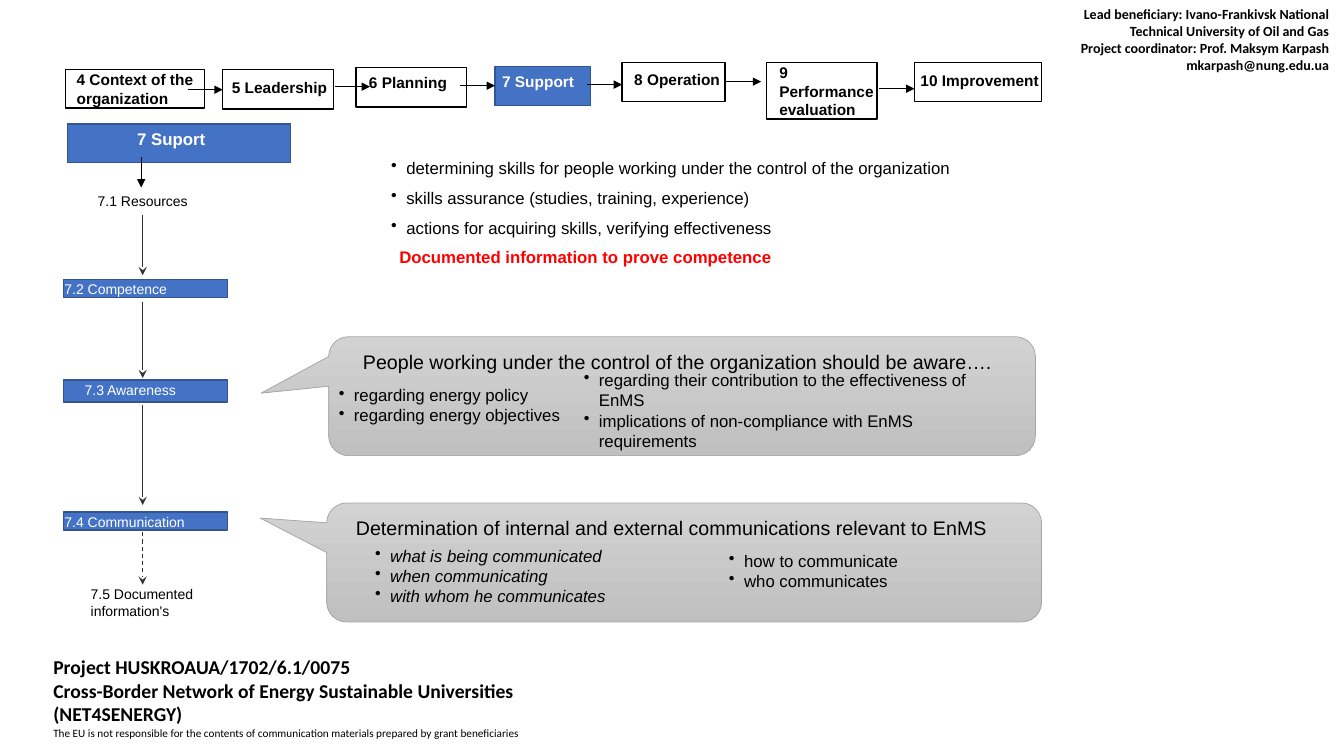
from collections import namedtuple
from lxml.etree import SubElement
from pptx import Presentation
from pptx.dml.color import RGBColor
from pptx.enum.dml import MSO_LINE
from pptx.enum.shapes import MSO_CONNECTOR as Connector, MSO_SHAPE as Shape
from pptx.enum.text import MSO_ANCHOR as Anchor, PP_ALIGN as Align
from pptx.oxml.ns import qn
from pptx.util import Inches, Pt

SLIDE_W, SLIDE_H = Inches(13.33), Inches(7.5)
COLUMN, ROW = SLIDE_W / 133.3, SLIDE_H / 75


class Theme:
    black, white, red = "000000", "FFFFFF", "FF0000"
    blue, navy, ink, grey = "4472C4", "325491", "333333", "A5A5A5"
    callout_top, callout_bottom = "D2D2D2", "C0C0C0"
    title, body, step, clause, contact, note = 14, 12, 11, 10, 10, 8
    font, project_font = "Arial", "Calibri"


class Box(namedtuple("Box", "x y w h")):
    """Area measured in grid columns and rows."""

    def inner(self, x, y, w, h):
        return Box(self.x + x, self.y + y, w, h)

    def emu(self):
        return [round(n * u) for n, u in zip(self, (COLUMN, ROW, COLUMN, ROW))]


def rgb(value):
    return RGBColor.from_string(value)


def set_attributes(target, values):
    for name, value in values.items():
        setattr(target, name, value)


def write(shape, lines, size, color=Theme.black, bold=False, italic=False,
          font=Theme.font, inset=(0, 0.1), gap=0, bullet=False, align=Align.LEFT):
    """Fill a shape with one paragraph per line; inset is columns, rows."""
    frame = shape.text_frame
    set_attributes(frame, {
        "word_wrap": True, "vertical_anchor": Anchor.TOP,
        "margin_left": round(inset[0] * COLUMN), "margin_right": 0,
        "margin_top": round(inset[1] * ROW), "margin_bottom": 0})
    for index, line in enumerate(lines):
        paragraph = frame.paragraphs[0] if index == 0 else frame.add_paragraph()
        if bullet:
            properties = paragraph._p.get_or_add_pPr()
            properties.set("marL", str(Inches(0.16)))
            properties.set("indent", str(-Inches(0.15)))
            SubElement(properties, qn("a:buChar")).set("char", "•")
        paragraph.alignment = align
        if index and gap:
            paragraph.space_before = Pt(gap)
        run = paragraph.add_run()
        run.text = line
        set_attributes(run.font, {"name": font, "size": Pt(size),
                                  "bold": bold, "italic": italic})
        run.font.color.rgb = rgb(color)


def add_text(slide, box, lines, size, **style):
    write(slide.shapes.add_textbox(*box.emu()), lines, size, **style)


def add_panel(slide, box, fill, line, width=1, preset=Shape.RECTANGLE):
    panel = slide.shapes.add_shape(preset, *box.emu())
    panel.shadow.inherit = False
    panel.fill.solid()
    panel.fill.fore_color.rgb = rgb(fill)
    panel.line.color.rgb = rgb(line)
    panel.line.width = Pt(width)
    return panel


def add_arrow(slide, start, end, width=1.0, color=Theme.black,
              head="triangle", dashed=False):
    ends = Box(*start, *end).emu()
    arrow = slide.shapes.add_connector(Connector.STRAIGHT, *ends)
    arrow.line.color.rgb = rgb(color)
    arrow.line.width = Pt(width)
    if dashed:
        arrow.line.dash_style = MSO_LINE.DASH
    SubElement(arrow.line._get_or_add_ln(), qn("a:tailEnd")).set("type", head)
    SubElement(arrow._element.spPr, qn("a:effectLst"))


def add_project_details(slide, box):
    heading = ["Project HUSKROAUA/1702/6.1/0075",
               "Cross-Border Network of Energy Sustainable Universities",
               "(NET4SENERGY)"]
    disclaimer = ["The EU is not responsible for the contents of communication "
                  "materials prepared by grant beneficiaries"]
    add_text(slide, box.inner(0, 0, box.w, 7.2), heading, Theme.title, bold=True,
             font=Theme.project_font, inset=(1, 0.5))
    add_text(slide, box.inner(0, 7.6, box.w, 1.5), disclaimer, Theme.note,
             font=Theme.project_font, inset=(1, 0))


def add_contacts(slide, box):
    contacts = ["Lead beneficiary: Ivano-Frankivsk National",
                "Technical University of Oil and Gas",
                "Project coordinator: Prof. Maksym Karpash",
                "mkarpash@nung.edu.ua"]
    add_text(slide, box, contacts, Theme.contact, bold=True, align=Align.RIGHT,
             font=Theme.project_font, inset=(0, 0.5))


def add_standard_chain(slide, box):
    """Row of standard chapters with the current one highlighted."""
    chapters = [
        ("4 Context of the organization", (0, 0.7, 13.8, 3.8), (1.1, 0.1)),
        ("5 Leadership", (15.6, 0.7, 11, 3.9), (0.9, 0.8)),
        ("6 Planning", (28.8, 0.5, 11, 3.9), (1.3, 0.6)),
        ("7 Support", (42.6, 0.4, 9.5, 3.9), (0.7, 0.6)),
        ("8 Operation", (55.2, 0, 10.2, 3.9), (1.2, 0.8)),
        ("9 Performance evaluation", (69.5, 0, 11, 5.6), (1.3, 0.1)),
        ("10 Improvement", (84.2, 0, 12.6, 3.9), (0.6, 0.9))]
    for label, place, inset in chapters:
        current = label == "7 Support"
        panel = add_panel(slide, box.inner(*place),
                          Theme.blue if current else Theme.white,
                          Theme.navy if current else Theme.black)
        write(panel, [label], Theme.step, bold=True, inset=inset,
              color=Theme.white if current else Theme.black)
    for x, y in [(12.1, 2.7), (26.7, 2.4), (39.1, 2.3), (51.7, 2.2),
                 (65.5, 1.9), (80.7, 2.6)]:
        start = box.inner(x, y, 0, 0)
        add_arrow(slide, start[:2], (start.x + 3.5, start.y))


def add_clause_column(slide, box):
    """Clauses of the current chapter, linked from top to bottom."""
    heading = add_panel(slide, box.inner(0.4, 0, 22.1, 3.8), Theme.blue, Theme.navy)
    write(heading, ["7 Suport"], Theme.body, color=Theme.white, bold=True,
          inset=(6.9, 0.5))
    for label, y, height, inset in [("7.2 Competence", 15.4, 1.8, 0.1),
                                    ("7.3 Awareness", 25.4, 2.2, 2.1),
                                    ("7.4 Communication", 38.5, 1.8, 0.1)]:
        panel = add_panel(slide, box.inner(0, y, 16.3, height), Theme.blue, Theme.navy)
        write(panel, [label], Theme.clause, color=Theme.white, inset=(inset, 0.15))
    for label, x, y, height in [("7.1 Resources", 3.3, 6.7, 1.8),
                                ("7.5 Documented information's", 2.6, 45.7, 3.5)]:
        add_text(slide, box.inner(x, y, 11.6, height), [label], Theme.clause,
                 inset=(0.1, 0.1))
    add_arrow(slide, box.inner(7.7, 3.3, 0, 0)[:2],
              box.inner(7.7, 6.3, 0, 0)[:2], 0.5)
    for top, bottom, dashed in [(9, 15, False), (17.7, 25.2, False),
                                (27.9, 37.8, False), (40.5, 45.7, True)]:
        add_arrow(slide, box.inner(7.85, top, 0, 0)[:2],
                  box.inner(7.85, bottom, 0, 0)[:2],
                  0.75, Theme.ink, "stealth", dashed)


def add_competence_notes(slide, box):
    skills = [
        "determining skills for people working under the control of the organization",
        "skills assurance (studies, training, experience)",
        "actions for acquiring skills, verifying effectiveness"]
    add_text(slide, box.inner(0, 0, box.w, 8.2), skills, Theme.body,
             bullet=True, gap=7.2, inset=(0, 1.1))
    add_text(slide, box.inner(0.9, 9.9, box.w - 0.9, 2),
             ["Documented information to prove competence"], Theme.body,
             color=Theme.red, bold=True)


def add_callout(slide, box, tip, title, title_at, columns):
    """Grey speech box; tip and texts are offsets from its corner."""
    callout = add_panel(slide, box, Theme.callout_top, Theme.grey, 0.5,
                        Shape.ROUNDED_RECTANGULAR_CALLOUT)
    callout.adjustments[0] = tip[0] / box.w - 0.5
    callout.adjustments[1] = tip[1] / box.h - 0.5
    callout.fill.gradient()
    callout.fill.gradient_angle = 270
    for stop, color in zip(callout.fill.gradient_stops,
                           (Theme.callout_top, Theme.callout_bottom)):
        stop.color.rgb = rgb(color)
    add_text(slide, box.inner(*title_at, 64.7, 2.5), [title], Theme.title,
             inset=(0.1, 0.1))
    for place, lines, italic in columns:
        add_text(slide, box.inner(*place), lines, Theme.body, bullet=True,
                 italic=italic)


def main():
    deck = Presentation()
    deck.slide_width, deck.slide_height = SLIDE_W, SLIDE_H
    slide = deck.slides.add_slide(deck.slide_layouts[6])
    add_project_details(slide, Box(4.3, 64.5, 73.8, 9.4))
    add_contacts(slide, Box(92.5, 0.1, 39.3, 7.7))
    add_standard_chain(slide, Box(6.5, 6.2, 96.8, 5.6))
    add_clause_column(slide, Box(6.3, 12.3, 22.5, 49.2))
    add_competence_notes(slide, Box(38.7, 14.5, 62.1, 12))
    add_callout(
        slide, Box(32.6, 33.4, 70.1, 11.8), (-6.7, 5.6),
        "People working under the control of the organization should be aware….",
        (3.3, 1.2),
        [((0.9, 4.7, 26.1, 6.2),
          ["regarding energy policy", "regarding energy objectives"], False),
         ((25.2, 3.2, 41.8, 8.2),
          ["regarding their contribution to the effectiveness of EnMS",
           "implications of non-compliance with EnMS requirements"], False)])
    add_callout(
        slide, Box(32.4, 49.9, 70.9, 11.8), (-6.6, 1.5),
        "Determination of internal and external communications relevant to EnMS",
        (2.8, 1.2),
        [((4.7, 4.1, 26.1, 6.2),
          ["what is being communicated", "when communicating",
           "with whom he communicates"], True),
         ((39.8, 4.6, 23.2, 6.2),
          ["how to communicate", "who communicates"], False)])
    deck.save("out.pptx")


if __name__ == "__main__":
    main()
